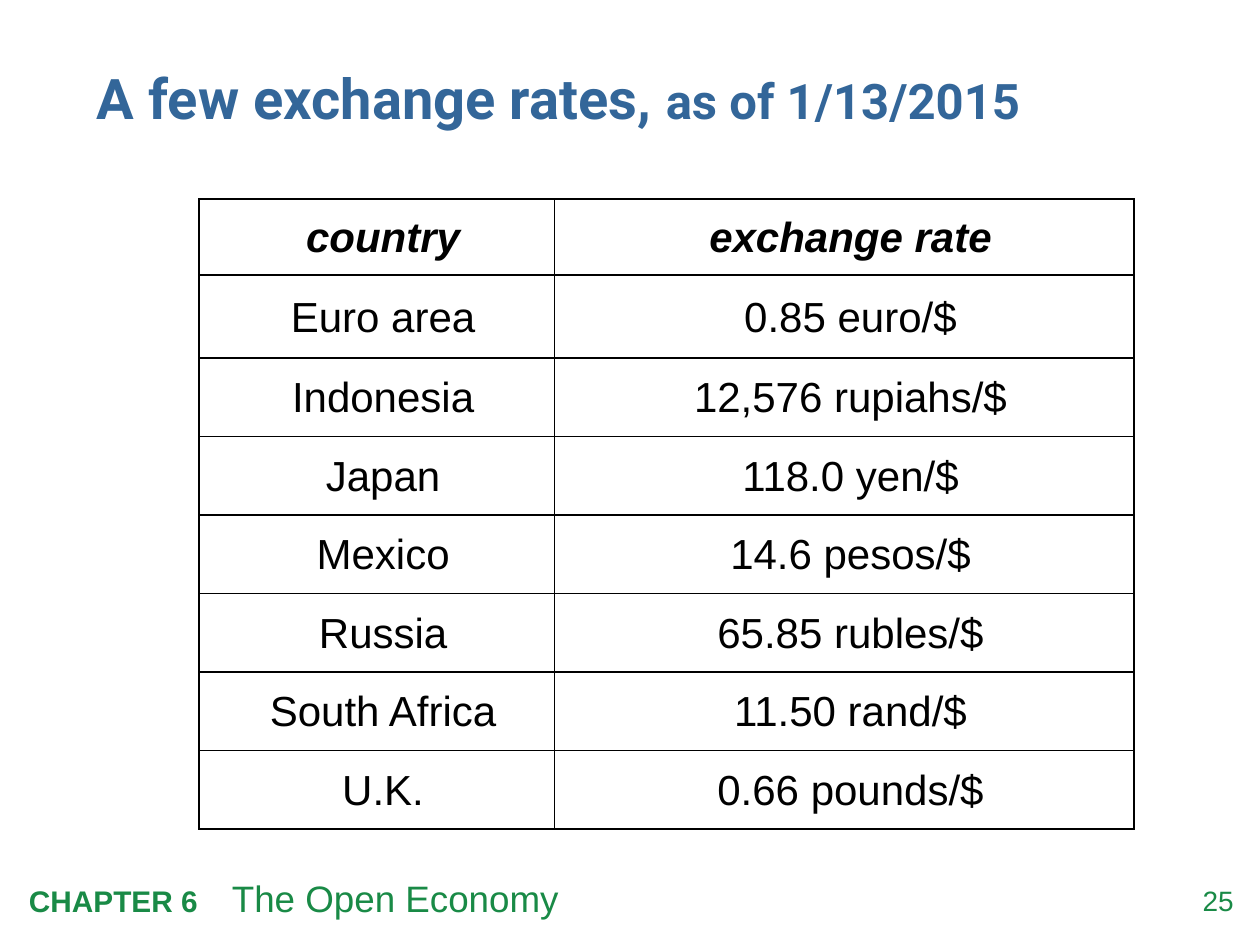
import lxml.etree
import pptx
import pptx.dml.color
import pptx.enum.text
import pptx.oxml.ns
import pptx.util

Pt = pptx.util.Pt
ALIGN = pptx.enum.text.PP_ALIGN
MIDDLE = pptx.enum.text.MSO_ANCHOR.MIDDLE

BLACK, WHITE, BLUE, GREEN = "000000", "FFFFFF", "336699", "198A46"
LINE_SPACING = 1.05

RATES = [
    ("country", "exchange rate"),
    ("Euro area", "0.85 euro/$"),
    ("Indonesia", "12,576 rupiahs/$"),
    ("Japan", "118.0 yen/$"),
    ("Mexico", "14.6 pesos/$"),
    ("Russia", "65.85 rubles/$"),
    ("South Africa", "11.50 rand/$"),
    ("U.K.", "0.66 pounds/$"),
]
COLUMN_SHARES = (0.38, 0.62)
HEADER_HEIGHT, FIRST_ROW_HEIGHT = 43.2, 47.5


def color(hex_string):
    return pptx.dml.color.RGBColor.from_string(hex_string)


def style(font, size, hex_color, name="Arial", bold=False, italic=False):
    font.size = Pt(size)
    font.name = name
    font.bold = bold
    font.italic = italic
    font.color.rgb = color(hex_color)


def add_child(parent, tag, **attributes):
    return lxml.etree.SubElement(parent, pptx.oxml.ns.qn(tag), attributes)


def add_text_frame(slide, box, side_inset=0, edge_inset=0):
    frame = slide.shapes.add_textbox(*map(Pt, box)).text_frame
    frame.word_wrap = True
    frame.margin_left = frame.margin_right = Pt(side_inset)
    frame.margin_top = frame.margin_bottom = Pt(edge_inset)
    return frame


def add_run(paragraph, text, size):
    run = paragraph.add_run()
    run.text = text
    run.font.size = Pt(size)
    return run


def add_title(slide, box):
    frame = add_text_frame(slide, box)
    frame.vertical_anchor = MIDDLE
    title = frame.paragraphs[0]
    title.line_spacing = LINE_SPACING
    style(title.font, 32, BLUE, name="Roboto", bold=True)
    add_run(title, "A few exchange rates, ", 32)
    add_run(title, "as of 1/13/2015", 28)


def add_footer(slide, box):
    """Chapter number, then its name at a tab stop."""
    footer = add_text_frame(slide, box, 7.2, 3.6).paragraphs[0]
    tabs = add_child(footer._p.get_or_add_pPr(), "a:tabLst")
    add_child(tabs, "a:tab", pos=str(Pt(116)), algn="l")
    style(footer.font, 21, GREEN)
    add_run(footer, "CHAPTER 6\t", 17).font.bold = True
    add_run(footer, "The Open Economy", 21)


def add_page_number(slide, box):
    number = add_text_frame(slide, box).paragraphs[0]
    number.text = "25"
    number.alignment = ALIGN.RIGHT
    style(number.font, 16, GREEN)


def add_borders(cell):
    properties = cell._tc.get_or_add_tcPr()
    for position, side in enumerate(("a:lnL", "a:lnR", "a:lnT", "a:lnB")):
        line = add_child(properties, side, w=str(Pt(1)))
        add_child(add_child(line, "a:solidFill"), "a:srgbClr", val=BLACK)
        properties.insert(position, line)  # borders come before the fill


def fill_cell(cell, text, is_header):
    cell.fill.solid()
    cell.fill.fore_color.rgb = color(WHITE)
    add_borders(cell)
    cell.vertical_anchor = MIDDLE
    cell.margin_left, cell.margin_right = Pt(14.4), Pt(7.2)
    cell.margin_top = cell.margin_bottom = Pt(3.6)
    entry = cell.text_frame.paragraphs[0]
    entry.text = text
    entry.alignment = ALIGN.CENTER
    entry.line_spacing = LINE_SPACING
    style(entry.font, 24, BLACK, bold=is_header, italic=is_header)


def add_rates_table(slide, box):
    width, height = box[2:]
    table = slide.shapes.add_table(
        len(RATES), len(COLUMN_SHARES), *map(Pt, box)).table
    table.horz_banding = False
    for column, share in zip(table.columns, COLUMN_SHARES):
        column.width = Pt(width * share)
    other_height = (height - HEADER_HEIGHT - FIRST_ROW_HEIGHT) / (len(RATES) - 2)
    heights = [HEADER_HEIGHT, FIRST_ROW_HEIGHT] + [other_height] * (len(RATES) - 2)
    for index, (row, row_height, texts) in enumerate(zip(table.rows, heights, RATES)):
        row.height = Pt(row_height)
        for cell, text in zip(row.cells, texts):
            fill_cell(cell, text, is_header=index == 0)


def main():
    deck = pptx.Presentation()
    deck.slide_width, deck.slide_height = Pt(720), Pt(540)
    slide = deck.slides.add_slide(deck.slide_layouts[6])
    add_page_number(slide, (665.3, 504.7, 39.6, 23))
    add_footer(slide, (9.4, 496.8, 589, 32.4))
    add_title(slide, (55.4, 17.3, 630.7, 74.2))
    add_rates_table(slide, (113.8, 113.8, 534.2, 360))
    deck.save("out.pptx")


if __name__ == "__main__":
    main()
